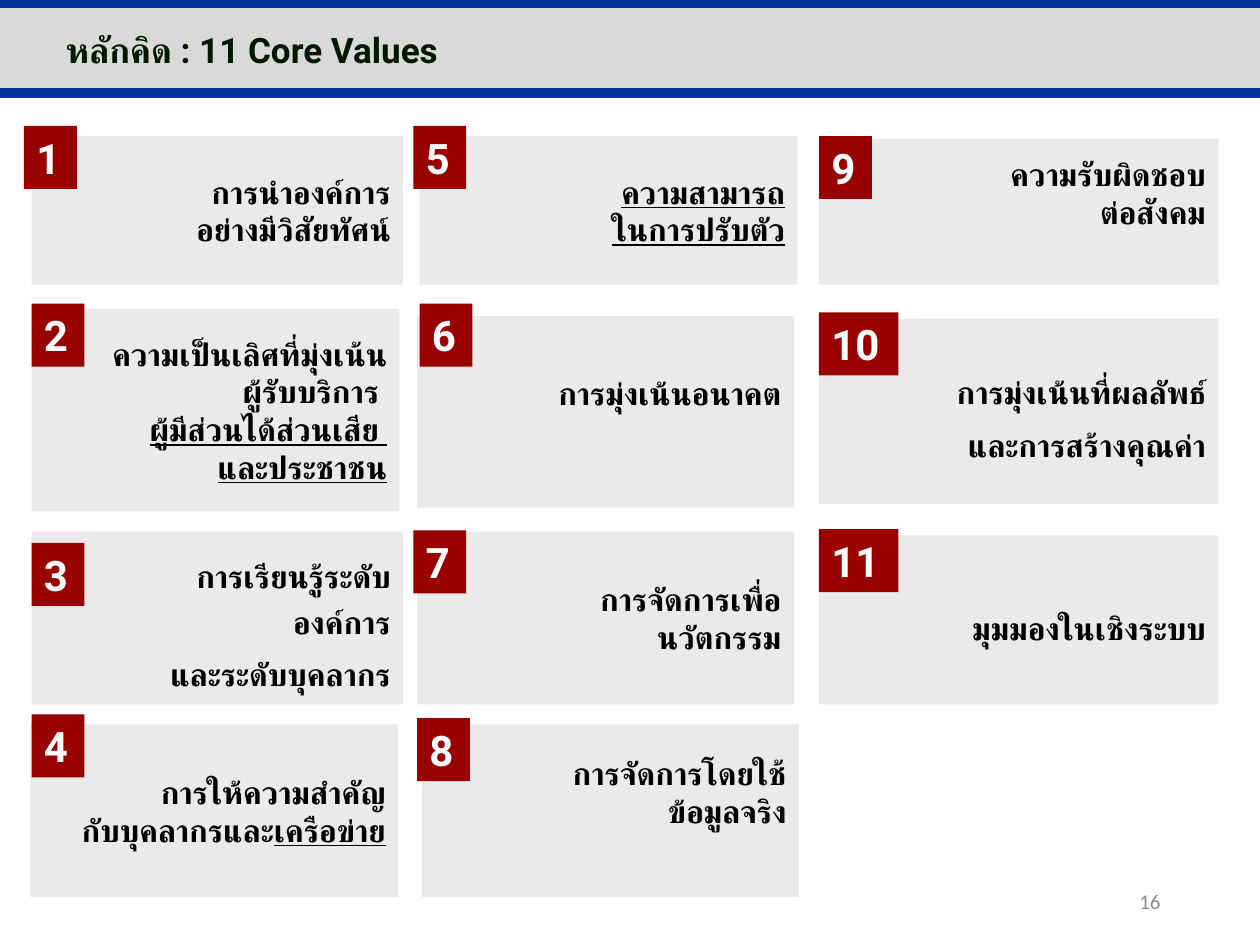
from dataclasses import dataclass

from lxml import etree
from pptx import Presentation
from pptx.dml.color import RGBColor
from pptx.enum.shapes import MSO_CONNECTOR, MSO_SHAPE
from pptx.enum.text import MSO_ANCHOR, MSO_AUTO_SIZE, PP_ALIGN
from pptx.oxml.ns import qn
from pptx.util import Inches, Pt

RECTANGLE = MSO_SHAPE.RECTANGLE
STRAIGHT = MSO_CONNECTOR.STRAIGHT
MIDDLE, TOP = MSO_ANCHOR.MIDDLE, MSO_ANCHOR.TOP
LEFT, CENTER, RIGHT = PP_ALIGN.LEFT, PP_ALIGN.CENTER, PP_ALIGN.RIGHT
NO_FIT, GROW = MSO_AUTO_SIZE.NONE, MSO_AUTO_SIZE.SHAPE_TO_FIT_TEXT

BAND, RULE, CARD, BADGE = "D9D9D9", "003399", "EAEAEA", "990000"
BLACK, WHITE, TITLE, GREY = "000000", "FFFFFF", "001800", "8C8C8C"

# Grid: columns are (left, width), rows are (top, bottom), in inches
COLUMNS = [(0.25, 2.95), (3.31, 2.99), (6.5, 3.17)]
ROWS = [(1.08, 2.26), (2.45, 4.06), (4.22, 5.59), (5.75, 7.12)]
BLANK_LINE = 0.3


@dataclass
class Run:
    text: str
    underline: bool = False


@dataclass
class Card:
    number: int
    column: int
    row: int
    paragraphs: list[list[Run]]
    badge: tuple[float, float]  # offset from the card's corner
    left: float = 0  # the rest are adjustments to the grid cell
    width: float = 0
    top: float = 0
    bottom: float = 0
    space_above: float = 0
    space_below: float = 0
    loose: bool = False


CARDS = [
    Card(1, 0, 0, [[Run("การนำองค์การ")], [Run("อย่างมีวิสัยทัศน์")]], (-0.06, -0.08)),
    Card(2, 0, 1, [[Run("ความเป็นเลิศที่มุ่งเน้น")], [Run("ผู้รับบริการ ")],
                   [Run("ผู้มีส่วนได้ส่วนเสีย ", True)], [Run("และประชาชน", True)]],
         (0, -0.04), width=-0.03),
    Card(3, 0, 2, [[Run("การเรียนรู้ระดับ\nองค์การ")], [Run("และระดับบุคลากร")]],
         (0, 0.09), space_above=0.05, loose=True),
    Card(4, 0, 3, [[Run("การให้ความสำคัญ")],
                   [Run("กับบุคลากรและ"), Run("เครือข่าย", True)]],
         (0.01, -0.08), left=-0.01, width=-0.03),
    Card(5, 1, 0, [[Run("ความสามารถ\nในการปรับตัว", True)]],
         (-0.05, -0.08), left=0.02, width=0.01),
    Card(6, 1, 1, [[Run("การมุ่งเน้นอนาคต")]], (0.02, -0.1),
         top=0.06, bottom=-0.03, space_below=BLANK_LINE),
    Card(7, 1, 2, [[Run("การจัดการเพื่อ")], [Run("นวัตกรรม")]], (-0.03, -0.01)),
    Card(8, 1, 3, [[Run("การจัดการโดยใช้")], [Run("ข้อมูลจริง")]],
         (-0.04, -0.05), left=0.04, space_below=BLANK_LINE),
    Card(9, 2, 0, [[Run("ความรับผิดชอบ")], [Run("ต่อสังคม")]],
         (0, -0.02), top=0.02, space_below=BLANK_LINE),
    Card(10, 2, 1, [[Run("การมุ่งเน้นที่ผลลัพธ์")], [Run("และการสร้างคุณค่า")]],
         (0, -0.05), top=0.08, bottom=-0.06, space_above=0.05, loose=True),
    Card(11, 2, 2, [[Run("มุมมองในเชิงระบบ")]], (0, -0.05), top=0.03, space_above=0.12),
]


def color(value: str) -> RGBColor:
    return RGBColor.from_string(value)


def add_run(paragraph, run: Run, size: float, hex_color: str,
            font_name: str = "Roboto", bold: bool = True) -> None:
    """Add one run per line, with line breaks between them."""
    for index, line in enumerate(run.text.split("\n")):
        if index:
            paragraph.add_line_break()
        text_run = paragraph.add_run()
        text_run.text = line
        font = text_run.font
        font.name, font.size, font.bold = font_name, Pt(size), bold
        font.color.rgb = color(hex_color)
        if run.underline:
            font.underline = True
        # Thai takes its typeface from the complex-script font
        complex_script = etree.SubElement(text_run._r.get_or_add_rPr(), qn("a:cs"))
        complex_script.set("typeface", font_name)


def set_frame(frame, anchor, wrap: bool = True, fit=NO_FIT) -> None:
    frame.vertical_anchor, frame.word_wrap, frame.auto_size = anchor, wrap, fit


def add_box(slide, left: float, top: float, width: float, height: float, fill: str):
    shape = slide.shapes.add_shape(
        RECTANGLE, Inches(left), Inches(top), Inches(width), Inches(height))
    shape.shadow.inherit = False
    shape.fill.solid()
    shape.fill.fore_color.rgb = color(fill)
    shape.line.fill.background()
    return shape


def add_rule(slide, top: float) -> None:
    rule = slide.shapes.add_connector(
        STRAIGHT, 0, Inches(top), Inches(10), Inches(top))
    rule.line.color.rgb = color(RULE)
    rule.line.width = Pt(6)
    etree.SubElement(rule._element.spPr, qn("a:effectLst"))


def card_corner(card: Card) -> tuple[float, float]:
    return COLUMNS[card.column][0] + card.left, ROWS[card.row][0] + card.top


def add_card(slide, card: Card) -> None:
    left, top = card_corner(card)
    width = COLUMNS[card.column][1] + card.width
    height = ROWS[card.row][1] + card.bottom - top
    frame = add_box(slide, left, top, width, height, CARD).text_frame
    set_frame(frame, MIDDLE)
    frame.margin_top = Inches(0.05 + card.space_above)
    frame.margin_bottom = Inches(0.05 + card.space_below)
    for index, runs in enumerate(card.paragraphs):
        paragraph = frame.add_paragraph() if index else frame.paragraphs[0]
        paragraph.alignment = RIGHT
        if card.loose:
            paragraph.line_spacing = 1.2
            if index:
                paragraph.space_before = Pt(4)
        for run in runs:
            add_run(paragraph, run, 18, BLACK)


def add_badge(slide, card: Card) -> None:
    left, top = card_corner(card)
    width = 0.42 if card.number < 10 else 0.63
    badge = add_box(slide, left + card.badge[0], top + card.badge[1], width, 0.5, BADGE)
    set_frame(badge.text_frame, TOP, wrap=False, fit=GROW)
    paragraph = badge.text_frame.paragraphs[0]
    paragraph.alignment = LEFT
    add_run(paragraph, Run(str(card.number)), 24, WHITE)


def add_title(slide, text: str) -> None:
    title = slide.shapes.title
    title.left, title.top = Inches(-0.07), Inches(0.16)
    title.width, title.height = Inches(4.21), Inches(0.46)
    set_frame(title.text_frame, MIDDLE)
    paragraph = title.text_frame.paragraphs[0]
    paragraph.alignment = CENTER
    add_run(paragraph, Run(text), 20, TITLE)
    slide.shapes._spTree.append(title._element)  # in front of the band


def add_page_number(slide, number: str) -> None:
    box = slide.shapes.add_textbox(Inches(7.06), Inches(6.95), Inches(2.25), Inches(0.4))
    set_frame(box.text_frame, MIDDLE)
    paragraph = box.text_frame.paragraphs[0]
    paragraph.alignment = RIGHT
    add_run(paragraph, Run(number), 12, GREY, "Calibri", False)


def main() -> None:
    presentation = Presentation()
    presentation.slide_width, presentation.slide_height = Inches(10), Inches(7.5)
    slide = presentation.slides.add_slide(presentation.slide_layouts[5])

    # Header band
    add_box(slide, 0, 0.05, 10, 0.68, BAND)
    for top in (0.74, 0.02):
        add_rule(slide, top)
    add_title(slide, "หลักคิด : 11 Core Values ")

    # Cards, then their numbers on top
    for card in CARDS:
        add_card(slide, card)
    for card in CARDS:
        add_badge(slide, card)
    add_page_number(slide, "16")

    presentation.save("out.pptx")


if __name__ == "__main__":
    main()
